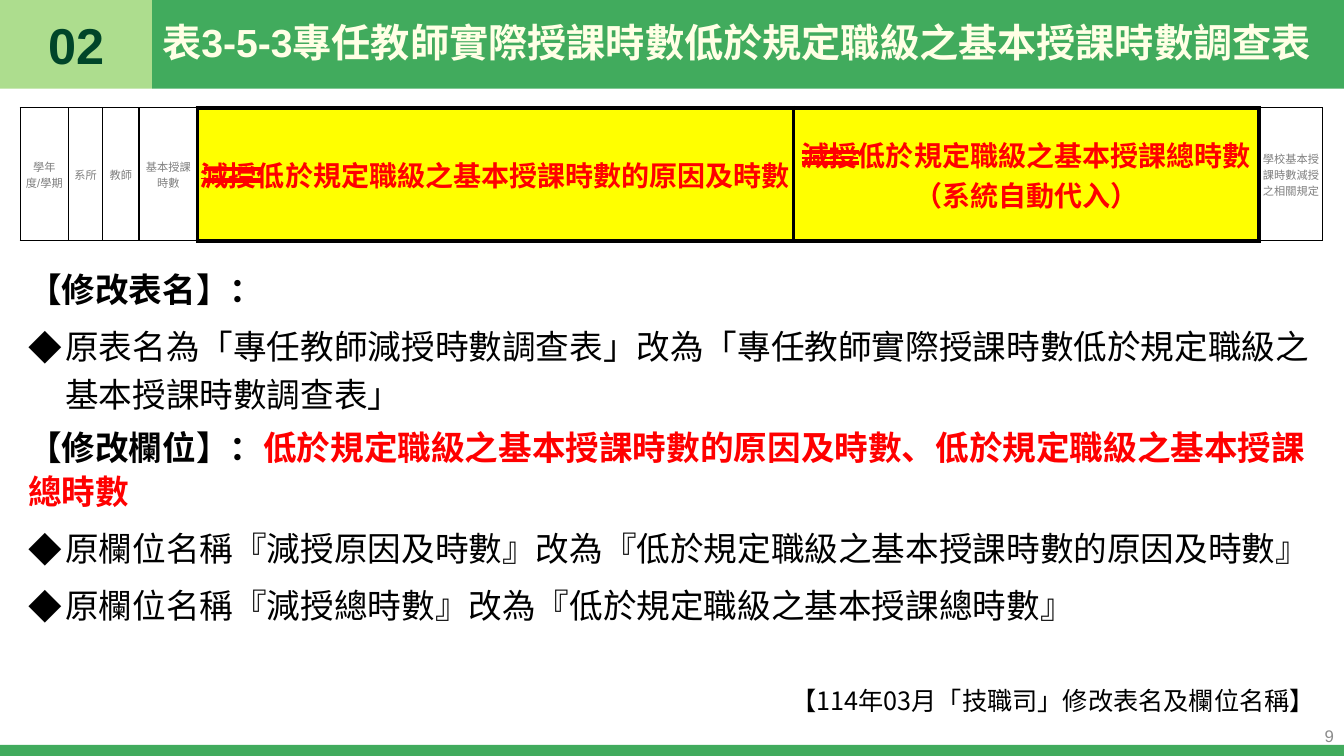
from lxml import etree
from pptx import Presentation
from pptx.dml.color import RGBColor
from pptx.enum.shapes import MSO_CONNECTOR, MSO_SHAPE
from pptx.enum.text import MSO_ANCHOR, PP_ALIGN
from pptx.oxml.ns import qn
from pptx.util import Inches, Pt

LEFT, CENTER, RIGHT = PP_ALIGN.LEFT, PP_ALIGN.CENTER, PP_ALIGN.RIGHT
TOP, MIDDLE = MSO_ANCHOR.TOP, MSO_ANCHOR.MIDDLE
RECTANGLE, STRAIGHT = MSO_SHAPE.RECTANGLE, MSO_CONNECTOR.STRAIGHT

GREEN = RGBColor(0x41, 0xAB, 0x5D)
LIGHT_GREEN = RGBColor(0xAD, 0xDD, 0x8E)
DARK_GREEN = RGBColor(0x00, 0x45, 0x29)
CREAM = RGBColor(0xFF, 0xFF, 0xE5)
YELLOW = RGBColor(0xFF, 0xFF, 0x00)
RED = RGBColor(0xFF, 0x00, 0x00)
BLACK = RGBColor(0x00, 0x00, 0x00)
GRAY = RGBColor(0x80, 0x80, 0x80)
PAGE_GRAY = RGBColor(0x8C, 0x8C, 0x8C)
LATIN_FONT, CHINESE_FONT = "Arial", "Noto Sans CJK SC"

# Content
SECTION = "02"
TITLE = "表3-5-3專任教師實際授課時數低於規定職級之基本授課時數調查表"
PAGE = "9"
NOTE = "【114年03月「技職司」修改表名及欄位名稱】"

# Body paragraphs: (bulleted, [(text, bold, colour)])
BODY = [
    (False, [("【修改表名】：", True, BLACK)]),
    (True, [("原表名為「專任教師減授時數調查表」改為「專任教師實際授課時數低於規定職級之基本授課時數調查表」", False, BLACK)]),
    (False, [("【修改欄位】：", True, BLACK),
             ("低於規定職級之基本授課時數的原因及時數、低於規定職級之基本授課總時數", True, RED)]),
    (True, [("原欄位名稱『減授原因及時數』改為『低於規定職級之基本授課時數的原因及時數』", False, BLACK)]),
    (True, [("原欄位名稱『減授總時數』改為『低於規定職級之基本授課總時數』", False, BLACK)]),
]

# Table columns: (width, struck text, lines of text)
COLUMNS = [
    (0.48, "", ["學年度/學期"]),
    (0.34, "", ["系所"]),
    (0.36, "", ["教師"]),
    (0.58, "", ["基本授課時數"]),
    (5.91, "減授", ["低於規定職級之基本授課時數的原因及時數"]),
    (4.62, "減授", ["低於規定職級之基本授課總時數", "（系統自動代入）"]),
    (0.63, "", ["學校基本授課時數減授之相關規定"]),
]
TABLE_LEFT, TABLE_TOP, TABLE_HEIGHT = 0.2, 1.07, 1.32

# Strike lines over the removed words: (left, upper line's top)
STRIKES = [(2.02, 1.68), (7.95, 1.51)]
STRIKE_WIDTH, STRIKE_GAP = 0.57, 0.11

presentation = Presentation()
presentation.slide_width, presentation.slide_height = Inches(13.33), Inches(7.5)
slide = presentation.slides.add_slide(presentation.slide_layouts[6])


def add_rectangle(left, top, width, height, color):
    shape = slide.shapes.add_shape(
        RECTANGLE, Inches(left), Inches(top), Inches(width), Inches(height))
    shape.shadow.inherit = False
    shape.fill.solid()
    shape.fill.fore_color.rgb = color
    shape.line.fill.background()


def add_text_frame(left, top, width, height, anchor):
    box = slide.shapes.add_textbox(
        Inches(left), Inches(top), Inches(width), Inches(height))
    frame = box.text_frame
    frame.word_wrap = True
    frame.vertical_anchor = anchor
    return frame


def add_run(paragraph, text, size, color, bold=False, font=LATIN_FONT, strike=False):
    run = paragraph.add_run()
    run.text = text
    run.font.size, run.font.bold, run.font.name = Pt(size), bold, font
    run.font.color.rgb = color
    properties = run.font._element
    etree.SubElement(properties, qn("a:ea"), typeface=CHINESE_FONT)
    if strike:
        properties.set("strike", "sngStrike")


def add_label(box, text, size, color, bold, align, spacing=1.0):
    paragraph = add_text_frame(*box, MIDDLE).paragraphs[0]
    paragraph.alignment, paragraph.line_spacing = align, spacing
    add_run(paragraph, text, size, color, bold)


def add_diamond_bullet(paragraph):
    properties = paragraph._p.get_or_add_pPr()
    properties.set("marL", str(Inches(0.37)))
    properties.set("indent", str(-Inches(0.37)))
    etree.SubElement(properties, qn("a:buFont"), typeface=CHINESE_FONT)
    etree.SubElement(properties, qn("a:buChar"), char="◆")


def set_borders(cell, widths):
    properties = cell._tc.get_or_add_tcPr()
    for side, width in zip("LRTB", widths):
        line = etree.SubElement(properties, qn("a:ln" + side), w=str(Pt(width)))
        fill = etree.SubElement(line, qn("a:solidFill"))
        etree.SubElement(fill, qn("a:srgbClr"), val=str(BLACK))


# Bands and header
add_rectangle(0, 7.39, 13.33, 0.11, GREEN)
add_rectangle(0, 0, 1.51, 0.88, LIGHT_GREEN)
add_rectangle(1.51, 0, 11.82, 0.88, GREEN)
add_label((1.51, 0, 11.62, 0.88), TITLE, 28, CREAM, True, LEFT, 0.9)
add_label((10.33, 7.1, 3, 0.4), PAGE, 12, PAGE_GRAY, False, RIGHT)
add_label((0, 0, 1.51, 0.88), SECTION, 36, DARK_GREEN, True, CENTER)

# Body text
body = add_text_frame(0.18, 2.58, 12.96, 4.6, TOP)
for index, (bulleted, runs) in enumerate(BODY):
    paragraph = body.add_paragraph() if index else body.paragraphs[0]
    paragraph.line_spacing = 1.2 if bulleted else 1.1
    paragraph.space_before = Pt(6 if index else 0)
    if bulleted:
        add_diamond_bullet(paragraph)
    for text, bold, color in runs:
        add_run(paragraph, text, 24, color, bold, CHINESE_FONT)
note = body.add_paragraph()
note.alignment, note.line_spacing, note.space_before = RIGHT, 1.1, Pt(41)
add_run(note, NOTE, 18, BLACK, font=CHINESE_FONT)

# Table of fields, the changed ones highlighted
table = slide.shapes.add_table(
    1, len(COLUMNS), Inches(TABLE_LEFT), Inches(TABLE_TOP),
    Inches(sum(column[0] for column in COLUMNS)), Inches(TABLE_HEIGHT)).table
table.first_row = table.horz_banding = False
changed = [bool(struck) for _, struck, _ in COLUMNS]
for index, (width, struck, lines) in enumerate(COLUMNS):
    table.columns[index].width = Inches(width)
    cell = table.cell(0, index)
    cell.vertical_anchor = MIDDLE
    cell.margin_left = cell.margin_right = Inches(0.02)
    cell.margin_top = cell.margin_bottom = 0
    own = 3 if struck else 1
    left = 3 if any(changed[max(index - 1, 0):index + 1]) else 1
    right = 3 if any(changed[index:index + 2]) else 1
    set_borders(cell, (left, right, own, own))
    if struck:
        cell.fill.solid()
        cell.fill.fore_color.rgb = YELLOW
    else:
        cell.fill.background()
    size, color = (20, RED) if struck else (8, GRAY)
    paragraph = cell.text_frame.paragraphs[0]
    paragraph.alignment = CENTER
    if struck:
        add_run(paragraph, struck, size, color, True, strike=True)
    for number, text in enumerate(lines):
        if number:
            paragraph.add_line_break()
        add_run(paragraph, text, size, color, bool(struck))

# Double strike lines
for left, top in STRIKES:
    for y in (top + STRIKE_GAP, top):
        line = slide.shapes.add_connector(
            STRAIGHT, Inches(left), Inches(y), Inches(left + STRIKE_WIDTH), Inches(y))
        line.line.color.rgb = RED
        line.line.width = Pt(3)
        etree.SubElement(line._element.spPr, qn("a:effectLst"))

presentation.save("out.pptx")
